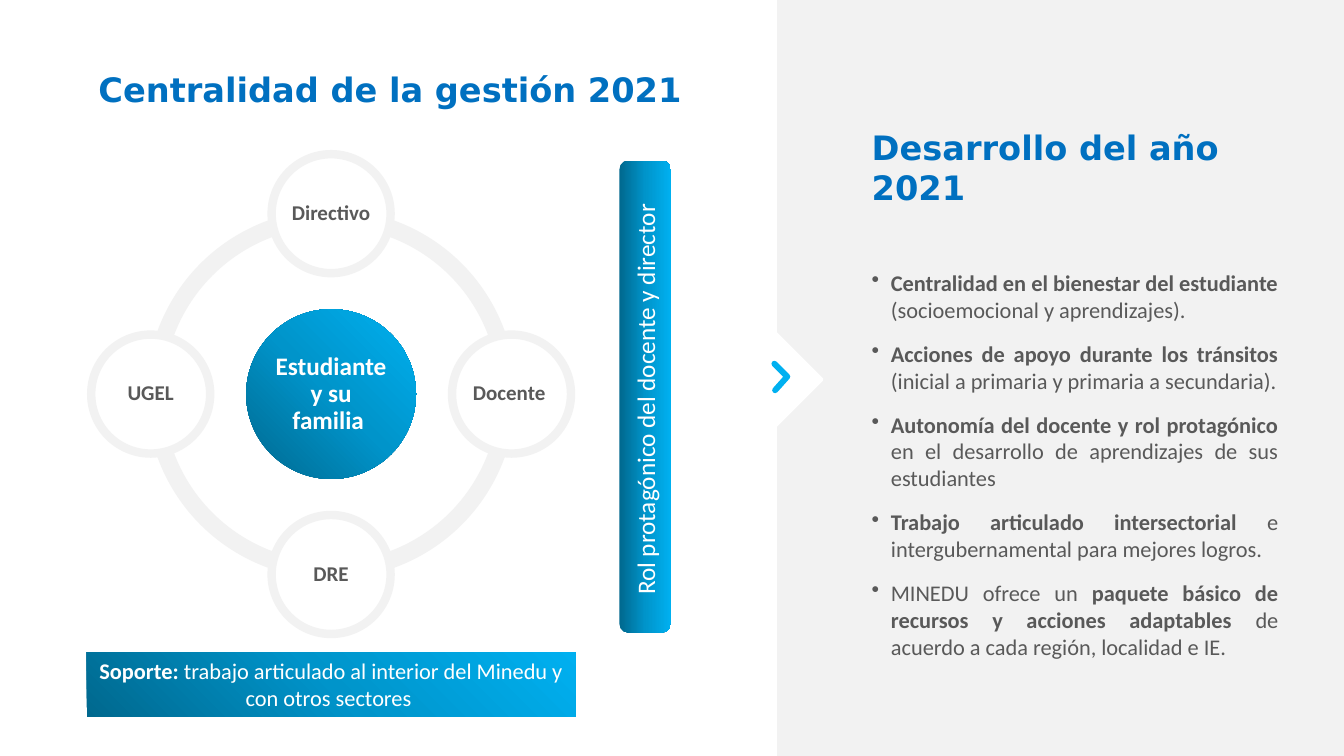
from copy import deepcopy
from dataclasses import dataclass

from lxml import etree
from pptx import Presentation
from pptx import util as u
from pptx.dml.color import RGBColor
from pptx.enum import shapes, text
from pptx.oxml.ns import qn

CELL = u.Inches(0.1)  # one column or row of the slide grid
COLUMNS, ROWS = 133.33, 75


@dataclass(frozen=True)
class Theme:
    heading_font: str = "DejaVu Sans"
    body_font: str = "Calibri"
    heading: str = "0070C0"
    body: str = "595959"
    white: str = "FFFFFF"
    panel: str = "F2F2F2"
    accent: str = "00B0F0"
    gradient: tuple = ("00688E", "0094CA", "00B0F0")
    heading_size: int = 24
    large_size: int = 18
    body_size: int = 16
    node_size: int = 15


@dataclass(frozen=True)
class Box:
    """A rectangle in grid columns and rows."""
    left: float
    top: float
    width: float
    height: float

    def emu(self):
        return [int(v * CELL) for v in (self.left, self.top, self.width, self.height)]

    def square(self, x, y, size):
        """A square centred at shares x, y, its side a share of the width."""
        side = size * self.width
        return Box(self.left + x * self.width - side / 2,
                   self.top + y * self.height - side / 2, side, side)


THEME = Theme()
PRESET = shapes.MSO_SHAPE
CENTER = text.PP_ALIGN.CENTER


def add_preset(slide, preset, box, color=None, line=None):
    shape = slide.shapes.add_shape(preset, *box.emu())
    shape.shadow.inherit = False
    if color:
        shape.fill.solid()
        shape.fill.fore_color.rgb = RGBColor.from_string(color)
    if line:
        shape.line.color.rgb = RGBColor.from_string(line)
        shape.line.width = u.Pt(6)
    else:
        shape.line.fill.background()
    return shape


def fill_gradient(shape, angle):
    shape.fill.gradient()
    shape.fill.gradient_angle = angle
    first = shape.fill._fill._gradFill.find(qn("a:gsLst"))[0]
    first.addnext(deepcopy(first))
    for i, (stop, color) in enumerate(zip(shape.fill.gradient_stops, THEME.gradient)):
        stop.color.rgb = RGBColor.from_string(color)
        stop.position = i / 2


def set_frame(shape, anchor, margins=(0.1, 0.05)):
    frame = shape.text_frame
    frame.word_wrap = True
    frame.vertical_anchor = anchor
    frame.margin_left = frame.margin_right = u.Inches(margins[0])
    frame.margin_top = frame.margin_bottom = u.Inches(margins[1])
    return frame


def add_runs(paragraph, runs, size, color, font=THEME.body_font):
    for words, bold in runs:
        run = paragraph.add_run()
        run.text = words
        run.font.name = font
        run.font.size = u.Pt(size)
        run.font.bold = bold
        run.font.color.rgb = RGBColor.from_string(color)


def add_label(shape, runs, size, color, anchor=text.MSO_ANCHOR.MIDDLE,
              margins=(0.1, 0.05), spacing=None):
    paragraph = set_frame(shape, anchor, margins).paragraphs[0]
    paragraph.alignment = CENTER
    paragraph.line_spacing = spacing
    add_runs(paragraph, runs, size, color)


def add_title(slide, box, words):
    frame = set_frame(slide.shapes.add_textbox(*box.emu()), text.MSO_ANCHOR.MIDDLE)
    paragraph = frame.paragraphs[0]
    paragraph.alignment = CENTER
    paragraph.line_spacing = 0.9
    add_runs(paragraph, [(words, True)], THEME.heading_size, THEME.heading,
             THEME.heading_font)


def add_cycle(slide, box, hub, nodes):
    """A hub inside a ring, with the nodes clockwise from the top."""
    ring = add_preset(slide, PRESET.DONUT, box.square(0.5, 0.5, 0.77), THEME.panel)
    ring.adjustments[0] = 0.046
    center = add_preset(slide, PRESET.OVAL, box.square(0.5, 0.5, 0.354))
    fill_gradient(center, 45)
    add_label(center, [(hub, True)], THEME.large_size, THEME.white,
              margins=(0.03, 0.03), spacing=0.9)
    size = 0.248
    near, far = size / 2, 1 - size / 2
    places = [(0.5, near), (far, 0.5), (0.5, far), (near, 0.5)]
    for name, (x, y) in zip(nodes, places):
        node = add_preset(slide, PRESET.OVAL, box.square(x, y, size),
                          THEME.white, THEME.panel)
        add_label(node, [(name, True)], THEME.node_size, THEME.body,
                  margins=(0.02, 0.02), spacing=0.9)


def add_support_bar(slide, box, runs):
    bar = add_preset(slide, PRESET.RECTANGLE, box)
    fill_gradient(bar, 45)
    add_label(bar, runs, THEME.body_size, THEME.white, text.MSO_ANCHOR.TOP)


def add_upright_bar(slide, box, words):
    """A bar that reads upwards; the box is its place before it is turned."""
    bar = add_preset(slide, PRESET.ROUNDED_RECTANGLE, box)
    bar.rotation = 270
    fill_gradient(bar, 270)
    add_label(bar, [(words, False)], THEME.large_size, THEME.white)


def add_bullet(paragraph):
    properties = paragraph._p.get_or_add_pPr()
    indent = u.Inches(0.19)
    properties.set("marL", str(indent))
    properties.set("indent", str(-indent))
    etree.SubElement(properties, qn("a:buChar")).set("char", "•")


def add_summary(slide, box, heading, items):
    frame = set_frame(slide.shapes.add_textbox(*box.emu()), text.MSO_ANCHOR.TOP)
    add_runs(frame.paragraphs[0], [(heading, True)], THEME.heading_size,
             THEME.heading, THEME.heading_font)
    for i, runs in enumerate(items):
        paragraph = frame.add_paragraph()
        add_bullet(paragraph)
        paragraph.alignment = text.PP_ALIGN.JUSTIFY
        paragraph.space_before = u.Pt(12.2 if i else 44)
        add_runs(paragraph, runs, THEME.body_size, THEME.body)


def add_pointer(slide, box):
    """A white diamond with a chevron in it."""
    diamond = add_preset(slide, PRESET.ROUNDED_RECTANGLE, box, THEME.white)
    diamond.adjustments[0] = 0.03
    diamond.rotation = 315
    left, top, width, height = box.emu()
    points = [(int(left + x * width), int(top + y * height))
              for x, y in [(0.51, 0.28), (0.69, 0.46), (0.52, 0.65)]]
    builder = slide.shapes.build_freeform(*points[0], scale=1.0)
    builder.add_line_segments(points[1:], close=False)
    chevron = builder.convert_to_shape()
    chevron.shadow.inherit = False
    chevron.fill.background()
    chevron.line.color.rgb = RGBColor.from_string(THEME.accent)
    chevron.line.width = u.Pt(4.25)
    chevron._element.spPr.find(qn("a:ln")).set("cap", "rnd")


def main():
    presentation = Presentation()
    presentation.slide_width = int(COLUMNS * CELL)
    presentation.slide_height = ROWS * CELL
    slide = presentation.slides.add_slide(presentation.slide_layouts[6])
    panel_left = 77.1
    add_preset(slide, PRESET.RECTANGLE,
               Box(panel_left, 0, COLUMNS - panel_left, ROWS), THEME.panel)
    add_title(slide, Box(5.8, 3.8, 65.8, 10.5), "Centralidad de la gestión 2021")
    add_summary(slide, Box(85.5, 12.1, 42.3, 56.4), "Desarrollo del año 2021", [
        [("Centralidad en el bienestar del estudiante ", True),
         ("(socioemocional y aprendizajes).", False)],
        [("Acciones de apoyo durante los tránsitos ", True),
         ("(inicial a primaria y primaria a secundaria).", False)],
        [("Autonomía del docente y rol protagónico ", True),
         ("en el desarrollo de aprendizajes de sus estudiantes ", False)],
        [("Trabajo articulado intersectorial ", True),
         ("e intergubernamental para mejores logros.", False)],
        [("MINEDU ofrece un ", False),
         ("paquete básico de recursos y acciones adaptables ", True),
         ("de acuerdo a cada región, localidad e IE.", False)],
    ])
    add_support_bar(slide, Box(8.6, 64.7, 48.5, 6.4), [
        ("Soporte: ", True),
        ("trabajo articulado al interior del Minedu y con otros sectores ", False)])
    add_upright_bar(slide, Box(40.6, 36.8, 46.8, 5.1),
                    "Rol protagónico del docente y director ")
    add_cycle(slide, Box(9.05, 15.3, 47.6, 47.6), "Estudiante y su familia ",
              ["Directivo", "Docente ", "DRE", "UGEL"])
    add_pointer(slide, Box(73.2, 34.1, 7.1, 7.1))
    presentation.save("out.pptx")


if __name__ == "__main__":
    main()
